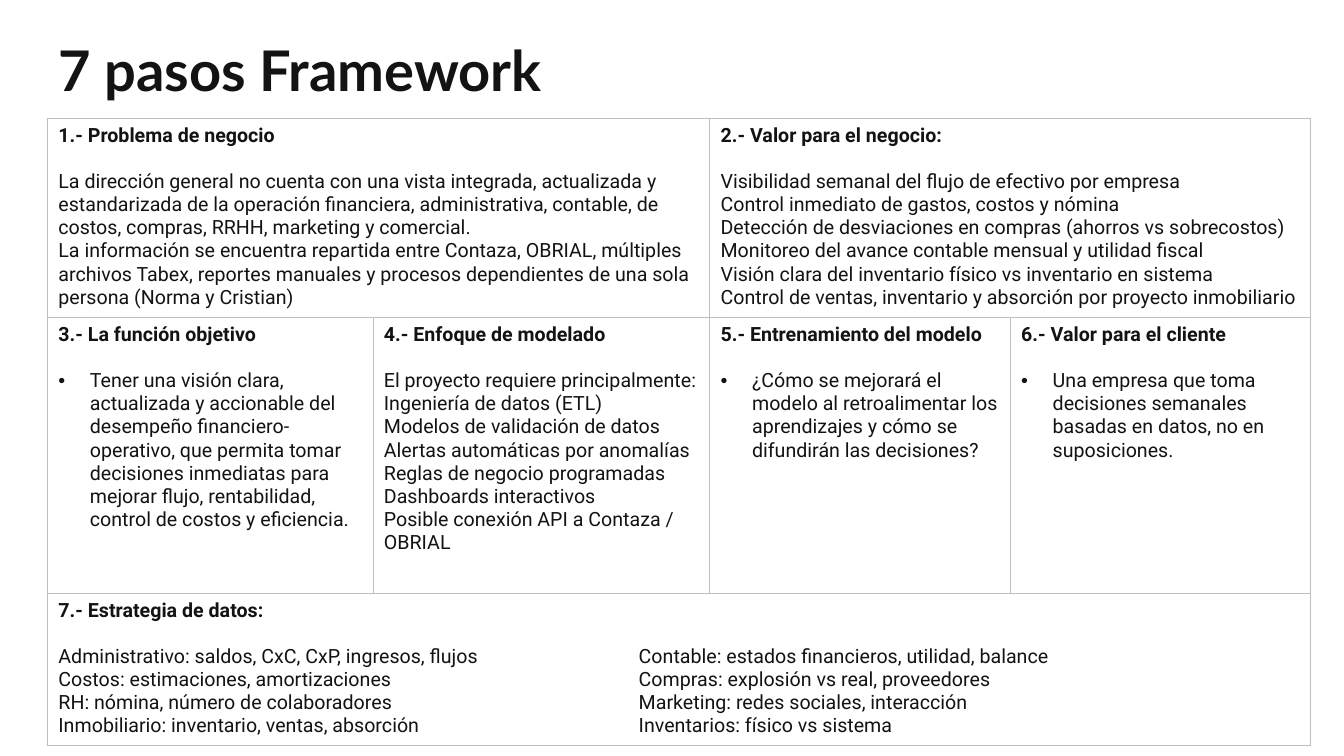
import pptx
import pptx.dml.color
import pptx.enum.text
import pptx.oxml
import pptx.oxml.ns
import pptx.util

Pt = pptx.util.Pt
INK = pptx.dml.color.RGBColor(0x13, 0x13, 0x13)
WHITE = pptx.dml.color.RGBColor(0xFF, 0xFF, 0xFF)
GRID = pptx.dml.color.RGBColor(0xBF, 0xBF, 0xBF)
NS = pptx.oxml.ns.nsdecls("a")

LEFT, WIDTH = 33.85, 902.5
COLUMN_WIDTHS = [232.5, 240.5, 214.75, 214.75]
ROW_HEIGHTS = [140.5, 197, 108]
INSET_X, INSET_Y = 7.9, 4
BODY_SIZE, HEADING_GAP = 14, 16.5
BULLET_INDENT = 22.5
SECOND_COLUMN = 414.5

# row, first column, last column, heading, bulleted, paragraphs
STEPS = [
    (0, 0, 1, "1.- Problema de negocio", False, [
        "La dirección general no cuenta con una vista integrada, actualizada y estandarizada "
        "de la operación financiera, administrativa, contable, de costos, compras, RRHH, "
        "marketing y comercial.",
        "La información se encuentra repartida entre Contaza, OBRIAL, múltiples archivos Tabex, "
        "reportes manuales y procesos dependientes de una sola persona (Norma y Cristian)",
    ]),
    (0, 2, 3, "2.- Valor para el negocio:", False, [
        "Visibilidad semanal del flujo de efectivo por empresa",
        "Control inmediato de gastos, costos y nómina",
        "Detección de desviaciones en compras (ahorros vs sobrecostos)",
        "Monitoreo del avance contable mensual y utilidad fiscal",
        "Visión clara del inventario físico vs inventario en sistema",
        "Control de ventas, inventario y absorción por proyecto inmobiliario",
    ]),
    (1, 0, 0, "3.- La función objetivo", True, [
        "Tener una visión clara, actualizada y accionable del desempeño financiero-operativo, "
        "que permita tomar decisiones inmediatas para mejorar flujo, rentabilidad, "
        "control de costos y eficiencia.",
    ]),
    (1, 1, 1, "4.- Enfoque de modelado", False, [
        "El proyecto requiere principalmente:",
        "Ingeniería de datos (ETL)",
        "Modelos de validación de datos",
        "Alertas automáticas por anomalías",
        "Reglas de negocio programadas",
        "Dashboards interactivos",
        "Posible conexión API a Contaza / OBRIAL",
    ]),
    (1, 2, 2, "5.- Entrenamiento del modelo", True, [
        "¿Cómo se mejorará el modelo al retroalimentar los aprendizajes y cómo se difundirán "
        "las decisiones?",
    ]),
    (1, 3, 3, "6.- Valor para el cliente", True, [
        "Una empresa que toma decisiones semanales basadas en datos, no en suposiciones.",
    ]),
    (2, 0, 3, "7.- Estrategia de datos:", False, [
        "Administrativo: saldos, CxC, CxP, ingresos, flujos\t"
        "Contable: estados financieros, utilidad, balance",
        "Costos: estimaciones, amortizaciones\tCompras: explosión vs real, proveedores",
        "RH: nómina, número de colaboradores\tMarketing: redes sociales, interacción",
        "Inmobiliario: inventario, ventas, absorción\tInventarios: físico vs sistema",
    ]),
]


def add_run(paragraph, text, font_name, size, bold):
    run = paragraph.add_run()
    run.text = text
    run.font.name = font_name
    run.font.size = Pt(size)
    run.font.bold = bold
    run.font.color.rgb = INK


presentation = pptx.Presentation()
presentation.slide_width = Pt(960)
presentation.slide_height = Pt(540)
slide = presentation.slides.add_slide(presentation.slide_layouts[6])

title = slide.shapes.add_textbox(Pt(LEFT), Pt(22.3), Pt(WIDTH), Pt(55.5)).text_frame
title.word_wrap = True
title.vertical_anchor = pptx.enum.text.MSO_ANCHOR.BOTTOM
title.margin_left = title.margin_right = Pt(INSET_X)
title.margin_top = title.margin_bottom = Pt(INSET_Y)
title.paragraphs[0].line_spacing = 0.9
add_run(title.paragraphs[0], "7 pasos Framework", "Lato", 40, True)

framework = slide.shapes.add_table(
    len(ROW_HEIGHTS), len(COLUMN_WIDTHS), Pt(LEFT), Pt(84.5), Pt(WIDTH), Pt(sum(ROW_HEIGHTS))
).table
framework.first_row = framework.horz_banding = False
for column, width in zip(framework.columns, COLUMN_WIDTHS):
    column.width = Pt(width)
for row, height in zip(framework.rows, ROW_HEIGHTS):
    row.height = Pt(height)

for cell in framework.iter_cells():
    cell_properties = cell._tc.get_or_add_tcPr()
    for side in ("lnL", "lnR", "lnT", "lnB"):
        cell_properties.append(pptx.oxml.parse_xml(
            f'<a:{side} {NS} w="{Pt(0.5)}"><a:solidFill><a:srgbClr val="{GRID}"/>'
            f'</a:solidFill></a:{side}>'))
    cell.fill.solid()
    cell.fill.fore_color.rgb = WHITE
    cell.margin_left = cell.margin_right = Pt(INSET_X)
    cell.margin_top = cell.margin_bottom = Pt(INSET_Y)

for row, first, last, heading, bulleted, lines in STEPS:
    cell = framework.cell(row, first)
    if last > first:
        cell.merge(framework.cell(row, last))
    heading_paragraph = cell.text_frame.paragraphs[0]
    heading_paragraph.space_after = Pt(HEADING_GAP)
    add_run(heading_paragraph, heading, "Roboto", BODY_SIZE, True)
    for line in lines:
        paragraph = cell.text_frame.add_paragraph()
        properties = paragraph._p.get_or_add_pPr()
        if bulleted:
            properties.set("marL", str(Pt(BULLET_INDENT)))
            properties.set("indent", str(-Pt(BULLET_INDENT)))
            properties.append(pptx.oxml.parse_xml(f'<a:buFont {NS} typeface="Arial"/>'))
            properties.append(pptx.oxml.parse_xml(f'<a:buChar {NS} char="•"/>'))
        if "\t" in line:
            properties.append(pptx.oxml.parse_xml(
                f'<a:tabLst {NS}><a:tab pos="{Pt(SECOND_COLUMN)}" algn="l"/></a:tabLst>'))
        add_run(paragraph, line, "Roboto", BODY_SIZE, False)

presentation.save("out.pptx")
